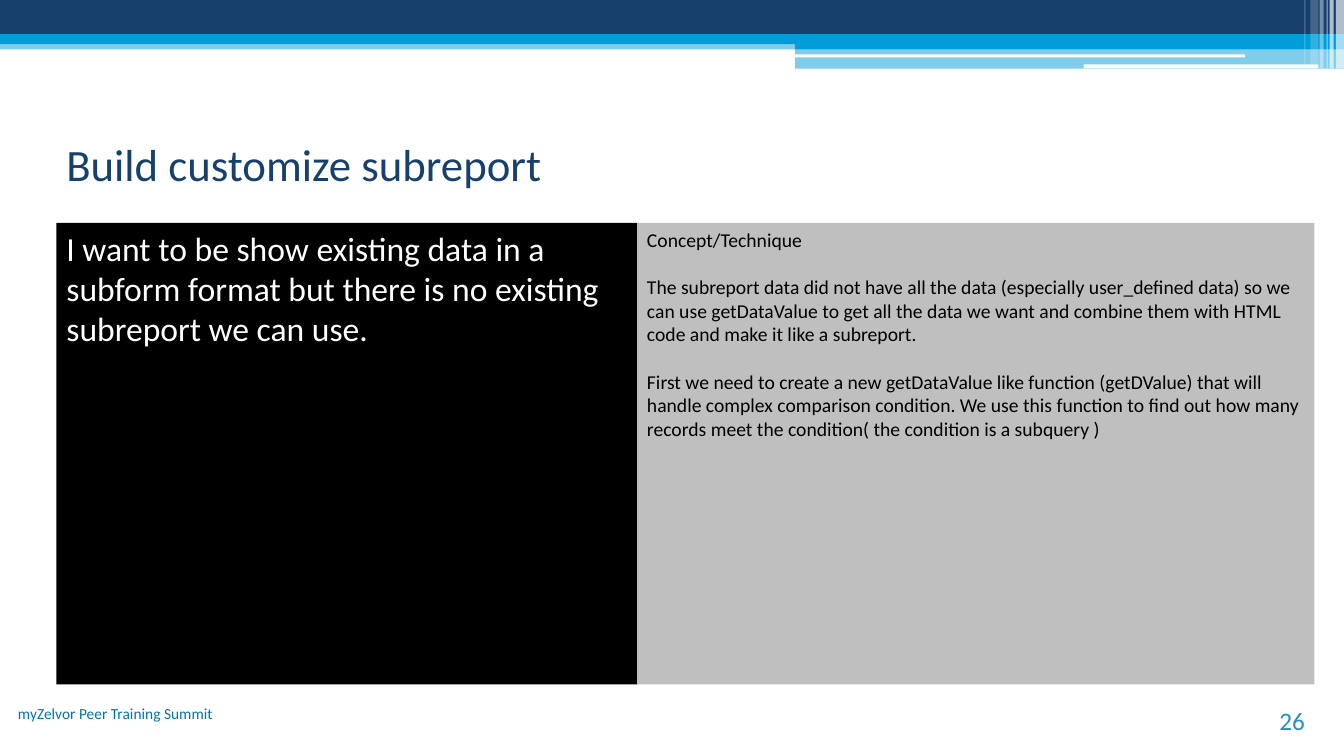
from dataclasses import dataclass

from lxml import etree
from pptx import Presentation
from pptx.dml.color import RGBColor
from pptx.enum.shapes import MSO_SHAPE
from pptx.enum.text import MSO_ANCHOR, PP_ALIGN
from pptx.oxml.ns import qn
from pptx.util import Inches, Pt

RECT, ROUND = MSO_SHAPE.RECTANGLE, MSO_SHAPE.ROUNDED_RECTANGLE
LEFT, RIGHT = PP_ALIGN.LEFT, PP_ALIGN.RIGHT
TOP, MIDDLE, BOTTOM = MSO_ANCHOR.TOP, MSO_ANCHOR.MIDDLE, MSO_ANCHOR.BOTTOM

WIDTH, HEIGHT = Inches(13.33), Inches(7.5)
COLORS = {
    "navy": "17406D",
    "blue": "009DD9",
    "white": "FFFFFF",
    "black": "000000",
    "gray": "BFBFBF",
    "teal": "0076A3",
    "sky": "2191C9",
}


@dataclass
class Area:
    """Percent of the slide's width and height."""
    left: float
    top: float
    width: float
    height: float

    def box(self) -> tuple[int, int, int, int]:
        return (
            int(WIDTH * self.left / 100),
            int(HEIGHT * self.top / 100),
            int(WIDTH * self.width / 100),
            int(HEIGHT * self.height / 100),
        )


@dataclass
class Band:
    area: Area
    color: str
    alpha: int = 100
    kind: int = RECT


@dataclass
class Panel:
    area: Area
    lines: list[str]
    size: int
    color: str
    fill: str = ""
    align: int = LEFT
    anchor: int = TOP
    gap: int = 0


def stripe(left: float, width: float, height: float, alpha: int) -> Band:
    return Band(Area(left, 0, width, height), "white", alpha)


SPLIT, SIDE = 59.15, 40.85
TALL, SHORT = 9.07, 8.53
ROW, DEPTH = 29.47, 61.07

BANDS = [
    Band(Area(0, 5.33, 100, 1.2), "blue", 50),
    Band(Area(0, 0, 100, 4.53), "navy"),
    Band(Area(0, 4.53, 100, 1.33), "blue"),
    Band(Area(SPLIT, 5.2, SIDE, 1.3), "blue"),
    Band(Area(SPLIT, 6.4, SIDE, 2.67), "blue", 50),
    Band(Area(SPLIT, 7.2, 33.5, 0.4), "white", kind=ROUND),
    Band(Area(80.63, 8.53, 17.47, 0.53), "white", kind=ROUND),
    stripe(99.4, 0.6, TALL, 65),
    stripe(98.93, 0.3, TALL, 65),
    stripe(98.7, 0.08, TALL, 60),
    stripe(98.18, 0.3, TALL, 40),
    stripe(97.5, 0.6, SHORT, 20),
    stripe(97.05, 0.08, SHORT, 30),
]

PANELS = [
    Panel(Area(4.2, 13.87, 88.73, 15.6), ["Build customize subreport"],
          32, "navy", anchor=MIDDLE),
    Panel(Area(4.2, ROW, 43.2, DEPTH), [
        "I want to be show existing data in a subform format but there is "
        "no existing subreport we can use.",
    ], 24, "white", "black"),
    Panel(Area(0, 92.53, 16.58, 6.67), ["myZelvor Peer Training Summit"],
          11, "teal", align=RIGHT),
    Panel(Area(89.5, 92.67, 8.33, 5.33), ["26"],
          18, "sky", align=RIGHT, anchor=BOTTOM),
    Panel(Area(47.4, ROW, 50.4, DEPTH), [
        "Concept/Technique",
        "The subreport data did not have all the data (especially "
        "user_defined data) so we can use getDataValue to get all the data "
        "we want and combine them with HTML code and make it like a "
        "subreport.",
        "First we need to create a new getDataValue like function "
        "(getDValue) that will handle complex comparison condition. We use "
        "this function to find out how many records meet the condition( the "
        "condition is a subquery )",
    ], 14, "black", "gray", gap=17),
]


def paint(shape, color: str, alpha: int = 100) -> None:
    shape.fill.solid()
    shape.fill.fore_color.rgb = RGBColor.from_string(COLORS[color])
    if alpha < 100:
        tint = shape.fill._xPr.find(".//" + qn("a:srgbClr"))
        etree.SubElement(tint, qn("a:alpha"), val=str(alpha * 1000))


def draw_band(slide, band: Band) -> None:
    shape = slide.shapes.add_shape(band.kind, *band.area.box())
    shape.shadow.inherit = False
    shape.line.fill.background()
    paint(shape, band.color, band.alpha)


def draw_panel(slide, panel: Panel) -> None:
    shape = slide.shapes.add_textbox(*panel.area.box())
    if panel.fill:
        paint(shape, panel.fill)
    frame = shape.text_frame
    frame.word_wrap = True
    frame.vertical_anchor = panel.anchor
    style = {"name": "Calibri", "size": Pt(panel.size)}
    for i, line in enumerate(panel.lines):
        para = frame.add_paragraph() if i else frame.paragraphs[0]
        para.alignment = panel.align
        if i:
            para.space_before = Pt(panel.gap)
        run = para.add_run()
        run.text = line
        for key, value in style.items():
            setattr(run.font, key, value)
        run.font.color.rgb = RGBColor.from_string(COLORS[panel.color])


def main() -> None:
    deck = Presentation()
    deck.slide_width, deck.slide_height = WIDTH, HEIGHT
    slide = deck.slides.add_slide(deck.slide_layouts[6])
    for band in BANDS:
        draw_band(slide, band)
    for panel in PANELS:
        draw_panel(slide, panel)
    deck.save("out.pptx")


if __name__ == "__main__":
    main()
